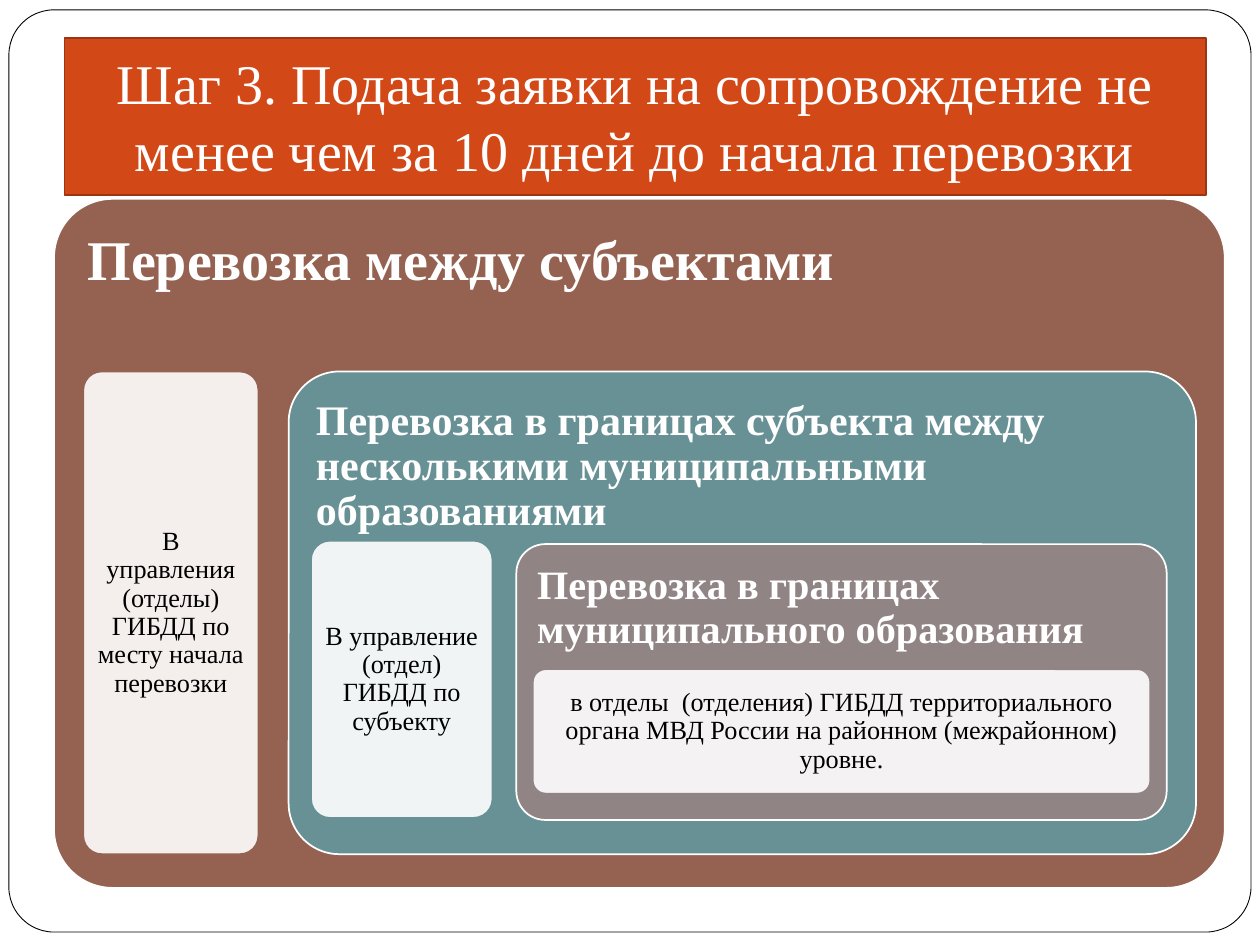
from lxml import etree
from pptx import Presentation
from pptx.dml.color import RGBColor
from pptx.enum.shapes import MSO_SHAPE
from pptx.enum.text import MSO_ANCHOR, PP_ALIGN
from pptx.oxml.ns import qn
from pptx.util import Cm, Pt

RECT, ROUND = MSO_SHAPE.RECTANGLE, MSO_SHAPE.ROUNDED_RECTANGLE
TOP, MIDDLE, BOTTOM = MSO_ANCHOR.TOP, MSO_ANCHOR.MIDDLE, MSO_ANCHOR.BOTTOM
LEFT, CENTER = PP_ALIGN.LEFT, PP_ALIGN.CENTER


def rgb(value):
    return RGBColor.from_string(value)


class NestedSlide:
    """Style and current slide for nested levels with recipient cards."""

    font = "Times New Roman"
    white, black = "FFFFFF", "000000"

    def __init__(self, prs):
        self.s = prs.slides.add_slide(prs.slide_layouts[6])

    def box(self, at, fill, line, width=1, radius=None):
        kind = RECT if radius is None else ROUND
        sp = self.s.shapes.add_shape(kind, *(Cm(v) for v in at))
        if radius is not None:
            sp.adjustments[0] = radius
        sp.shadow.inherit = False
        sp.fill.solid()
        sp.fill.fore_color.rgb = rgb(fill)
        sp.line.color.rgb = rgb(line)
        sp.line.width = Pt(width)
        return sp

    def text(self, sp, text, size, color, anchor, align, insets, spacing=0.9, bold=False):
        tf = sp.text_frame
        tf.word_wrap = True
        tf.vertical_anchor = anchor
        tf.margin_left, tf.margin_top, tf.margin_right, tf.margin_bottom = (Cm(v) for v in insets)
        p = tf.paragraphs[0]
        p.text = text
        p.alignment = align
        p.line_spacing = spacing
        p.font.name = self.font
        p.font.size = Pt(size)
        p.font.bold = bold
        p.font.color.rgb = rgb(color)

    def frame(self, at):
        self.box(at, self.white, self.black, 0.5, 0.049)

    def title(self, at, text):
        sp = self.box(at, "D34817", "9C3511")
        self.text(sp, text, 32, self.white, BOTTOM, CENTER, (0.25, 0.13, 0.25, 0.25), 1.0)

    def level(self, at, text, fill, size, inset=0.25, radius=0.105):
        sp = self.box(at, fill, self.white, radius=radius)
        self.text(sp, text, size, self.white, TOP, LEFT, [inset] * 4, bold=True)

    def card(self, at, text, line):
        sp = self.box(at, self.white, line, radius=0.105)
        color = sp.fill._xPr.find(qn("a:solidFill"))[0]
        etree.SubElement(color, qn("a:alpha")).set("val", "90000")
        self.text(sp, text, 15, self.black, MIDDLE, CENTER, [0.15] * 4)


def main():
    prs = Presentation()
    prs.slide_width, prs.slide_height = Cm(25.4), Cm(19.05)
    slide = NestedSlide(prs)
    brown, teal, mauve = "956251", "689195", "918485"

    slide.frame((0.18, 0.2, 25.04, 18.59))
    slide.title((1.3, 0.76, 23.01, 3.18),
                "Шаг 3. Подача заявки на сопровождение не менее чем за 10 дней до начала перевозки")

    slide.level((1.09, 4.01, 23.6, 13.89), "Перевозка между субъектами", brown, 32, 0.33, 0.085)
    slide.card((1.68, 7.49, 3.53, 9.73),
               "В управления (отделы) ГИБДД по месту начала перевозки", brown)

    slide.level((5.82, 7.49, 18.29, 9.73),
                "Перевозка в границах субъекта между несколькими муниципальными образованиями", teal, 24)
    slide.card((6.27, 10.9, 3.66, 5.59), "В управление (отдел) ГИБДД по субъекту", teal)

    slide.level((10.41, 10.97, 13.11, 5.56),
                "Перевозка в границах муниципального образования", mauve, 23)
    slide.card((10.74, 13.49, 12.45, 2.51),
               "в отделы  (отделения) ГИБДД территориального органа МВД России "
               "на районном (межрайонном) уровне.", mauve)

    prs.save("out.pptx")


if __name__ == "__main__":
    main()
